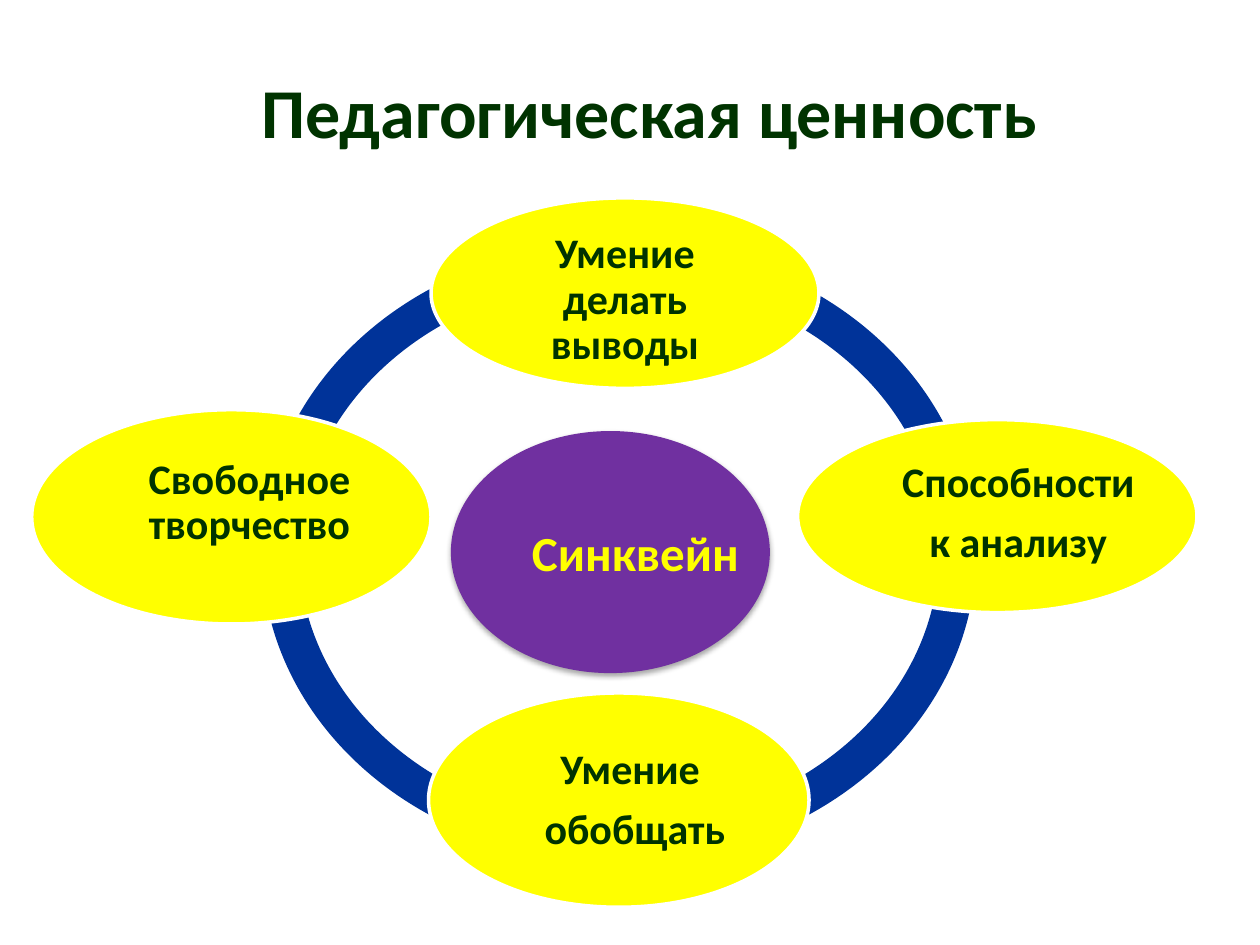
from dataclasses import dataclass

from lxml import etree
from pptx import Presentation
from pptx.dml.color import RGBColor
from pptx.enum.shapes import MSO_SHAPE
from pptx.enum.text import MSO_ANCHOR, PP_ALIGN
from pptx.oxml import parse_xml
from pptx.util import Cm, Pt

OVAL = MSO_SHAPE.OVAL
DONUT = MSO_SHAPE.DONUT
MIDDLE = MSO_ANCHOR.MIDDLE
CENTER = PP_ALIGN.CENTER
NS = "http://schemas.openxmlformats.org/drawingml/2006/main"
FONT = "Calibri"
GREEN, YELLOW, WHITE = "003300", "FFFF00", "FFFFFF"
BLUE, PURPLE = "003399", "7030A0"


@dataclass
class Box:
    left: float
    top: float
    width: float
    height: float

    def lengths(self) -> tuple:
        return Cm(self.left), Cm(self.top), Cm(self.width), Cm(self.height)


@dataclass
class Node:
    oval: Box
    label: Box
    lines: list[str]
    fill: str = YELLOW
    line: str | None = WHITE
    color: str = GREEN
    size: int = 24
    shadow: bool = False


NODES = [
    Node(Box(0.64, 8.26, 8.05, 4.32), Box(1.6, 8.03, 6.86, 4.24), ["Свободное творчество"]),
    Node(Box(8.69, 3.99, 7.82, 3.84), Box(9.83, 4.22, 5.54, 3.68), ["Умение делать выводы"]),
    Node(Box(16.08, 8.46, 8.05, 3.89), Box(17.35, 8.76, 6.55, 3.2), ["Способности ", "к анализу "]),
    Node(Box(8.64, 13.97, 7.67, 4.32), Box(7.82, 14.3, 9.96, 3.68), ["Умение ", "обобщать"]),
    Node(Box(9.09, 8.69, 6.43, 4.88), Box(8.69, 9.29, 8.46, 3.81), ["Синквейн "],
         fill=PURPLE, line=None, color=YELLOW, size=28, shadow=True),
]


def rgb(value: str) -> RGBColor:
    return RGBColor.from_string(value)


def write(tf, lines: list[str], *, size: int, color: str,
          spacing: float = 1.0, after: float = 0) -> None:
    tf.word_wrap = True
    tf.vertical_anchor = MIDDLE
    for i, text in enumerate(lines):
        p = tf.add_paragraph() if i else tf.paragraphs[0]
        p.alignment = CENTER
        p.line_spacing = spacing
        p.space_after = Pt(after)
        r = p.add_run()
        r.text = text
        r.font.name = FONT
        r.font.size = Pt(size)
        r.font.bold = True
        r.font.color.rgb = rgb(color)


def add_shape(slide, kind, box: Box, fill: str, line: str | None = None):
    sp = slide.shapes.add_shape(kind, *box.lengths())
    sp.shadow.inherit = False
    sp.fill.solid()
    sp.fill.fore_color.rgb = rgb(fill)
    if line:
        sp.line.color.rgb = rgb(line)
        sp.line.width = Pt(2)
    else:
        sp.line.fill.background()
    return sp


def add_shadow(sp) -> None:
    effects = sp._element.spPr.find(f"{{{NS}}}effectLst")
    shadow = parse_xml(
        f'<a:outerShdw xmlns:a="{NS}" blurRad="{Pt(3.1)}" dist="{Pt(1.8)}" '
        'dir="5400000" rotWithShape="0"><a:srgbClr val="000000"/></a:outerShdw>')
    etree.SubElement(shadow[0], f"{{{NS}}}alpha", val="35000")
    effects.append(shadow)


def add_node(slide, node: Node) -> None:
    sp = add_shape(slide, OVAL, node.oval, node.fill, node.line)
    if node.shadow:
        add_shadow(sp)
    tf = slide.shapes.add_textbox(*node.label.lengths()).text_frame
    tf.margin_left = tf.margin_right = tf.margin_top = tf.margin_bottom = Cm(0.08)
    write(tf, node.lines, size=node.size, color=node.color, spacing=0.9, after=8.4)


def main() -> None:
    prs = Presentation()
    prs.slide_width, prs.slide_height = Cm(25.4), Cm(19.05)
    slide = prs.slides.add_slide(prs.slide_layouts[5])
    title = slide.shapes.title
    title.left, title.top, title.width, title.height = Box(2.12, 0.64, 21.94, 3.18).lengths()
    write(title.text_frame, ["Педагогическая ценность"], size=40, color=GREEN)
    ring = add_shape(slide, DONUT, Box(5.28, 4.88, 14.4, 12.5), BLUE)
    ring.adjustments[0] = 0.06
    for node in NODES:
        add_node(slide, node)
    prs.save("out.pptx")


if __name__ == "__main__":
    main()
